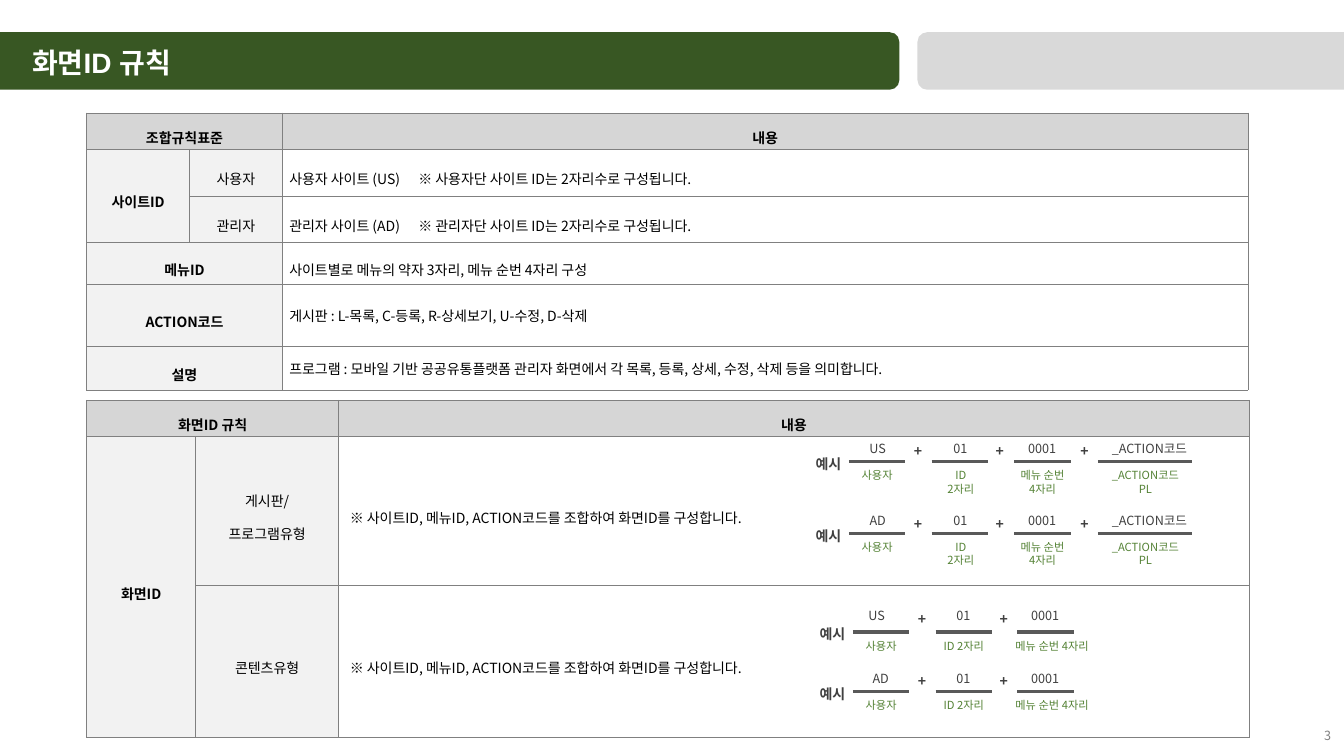
from lxml.etree import SubElement
from pptx import Presentation
from pptx.dml.color import RGBColor
from pptx.enum.shapes import MSO_CONNECTOR as CONN, MSO_SHAPE as SHAPE
from pptx.enum.text import MSO_ANCHOR as ANCHOR, MSO_AUTO_SIZE as AUTO, PP_ALIGN as ALIGN
from pptx.oxml.ns import qn
from pptx.util import Pt

PX = 9144
NOTO = "Noto Sans CJK KR"


def px(n):
    return n * PX


def rgb(value):
    return RGBColor.from_string(value)


class Deck:
    dark, rule, green, grid = "404040", "595959", "548235", "808080"

    def __init__(self, width, height):
        self.prs = Presentation()
        self.prs.slide_width, self.prs.slide_height = px(width), px(height)
        self.s = self.prs.slides.add_slide(self.prs.slide_layouts[6])

    def style(self, tf, size, color, bold=False, align=ALIGN.CENTER, spacing=None, font=NOTO):
        for p in tf.paragraphs:
            p.alignment = align
            if spacing:
                p.line_spacing = spacing
            for r in p.runs:
                r.font.size, r.font.bold, r.font.name = Pt(size), bold, font
                r.font.color.rgb = rgb(color)
                SubElement(r.font._element, qn("a:ea"), typeface=NOTO)

    def text(self, x, y, w, h, text, size, color, anchor=ANCHOR.TOP, grow=True, **kw):
        tf = self.s.shapes.add_textbox(px(x), px(y), px(w), px(h)).text_frame
        tf.word_wrap = True
        tf.auto_size = AUTO.SHAPE_TO_FIT_TEXT if grow else AUTO.NONE
        tf.vertical_anchor = anchor
        tf.text = text
        self.style(tf, size, color, **kw)

    def bar(self, x, y, w, h, color):
        sp = self.s.shapes.add_shape(SHAPE.ROUNDED_RECTANGLE, px(x), px(y), px(w), px(h))
        sp.shadow.inherit = False
        sp.fill.solid()
        sp.fill.fore_color.rgb = rgb(color)
        sp.line.fill.background()

    def line(self, x, y, w):
        c = self.s.shapes.add_connector(CONN.STRAIGHT, px(x), px(y), px(x + w), px(y))
        c.line.color.rgb = rgb(self.rule)
        c.line.width = Pt(2.25)
        SubElement(c._element.spPr, qn("a:effectLst"))

    def border(self, cell):
        tcPr = cell._tc.get_or_add_tcPr()
        for side in "LRTB":
            ln = SubElement(tcPr, qn(f"a:ln{side}"), w=str(Pt(0.5)))
            fill = SubElement(ln, qn("a:solidFill"))
            SubElement(fill, qn("a:srgbClr"), val=self.grid)

    def table(self, x, y, widths, heights, rows, spans, inset=7, tight=(), tab=None):
        frame = self.s.shapes.add_table(
            len(heights), len(widths), px(x), px(y), px(sum(widths)), px(sum(heights)))
        t = frame.table
        t.first_row = t.horz_banding = False
        for col, w in zip(t.columns, widths):
            col.width = px(w)
        for row, h in zip(t.rows, heights):
            row.height = px(h)
        for i, row in enumerate(rows):
            for j, text in enumerate(row):
                cell = t.cell(i, j)
                body = i > 0 and j == 2
                self.border(cell)
                if body:
                    cell.fill.background()
                else:
                    cell.fill.solid()
                    cell.fill.fore_color.rgb = rgb("F2F2F2" if i else "D6D6D6")
                cell.vertical_anchor = ANCHOR.MIDDLE
                cell.margin_left = px(inset if body else 7)
                cell.margin_right = px(7)
                cell.margin_top = cell.margin_bottom = px(2)
                tf = cell.text_frame
                tf.text = text
                self.style(tf, 10, "000000", bold=i == 0 or j == 0,
                           align=ALIGN.LEFT if body else ALIGN.CENTER,
                           spacing=None if body and i in tight else 1.6)
                if "\t" in text:
                    stops = SubElement(tf.paragraphs[0]._p.get_or_add_pPr(), qn("a:tabLst"))
                    SubElement(stops, qn("a:tab"), pos=str(px(tab)), algn="l")
        for first, last in spans:
            t.cell(*first).merge(t.cell(*last))

    def formula(self, x, y, mark_y, site, site_x, parts):
        self.text(x - 43, y - 18, 51, 32, "예시", 10, self.dark, ANCHOR.MIDDLE,
                  bold=True, align=ALIGN.LEFT, spacing=1.5)
        parts = [(0, 56, site, site_x, 51, "사용자", -8, 72)] + parts
        for dx, w, value, value_x, value_w, caption, caption_x, caption_w in parts:
            self.line(x + dx, y, w)
            self.text(x + value_x, mark_y - 1, value_w, 30, value, 9, self.dark,
                      ANCHOR.MIDDLE, spacing=1.5)
            self.text(x + caption_x, y + 2, caption_w, 37 if "\n" in caption else 24,
                      caption, 8, self.green)
        for plus_x in (43, 124, 208)[:len(parts) - 1]:
            self.text(x + plus_x, mark_y, 51, 33, "+", 10, self.dark, ANCHOR.MIDDLE,
                      bold=True, spacing=1.5)


def main():
    d = Deck(1333, 750)
    combine = "※ 사이트ID, 메뉴ID, ACTION코드를 조합하여 화면ID를 구성합니다."
    d.table(86, 397, (108, 142, 903), (30, 148, 151), [
        ("화면ID 규칙", "", "내용"),
        ("화면ID", "게시판/\n프로그램유형", combine),
        ("", "콘텐츠유형", combine),
    ], [((0, 0), (0, 1)), ((1, 0), (2, 0))], inset=11)
    d.table(86, 112, (102, 92, 958), (28, 47, 45, 42, 62, 43), [
        ("조합규칙표준", "", "내용"),
        ("사이트ID", "사용자", "사용자 사이트 (US)\t※ 사용자단 사이트 ID는 2자리수로 구성됩니다."),
        ("", "관리자", "관리자 사이트 (AD)\t※ 관리자단 사이트 ID는 2자리수로 구성됩니다."),
        ("메뉴ID", "", "사이트별로 메뉴의 약자 3자리, 메뉴 순번 4자리 구성"),
        ("ACTION코드", "", "게시판 : L-목록, C-등록, R-상세보기, U-수정, D-삭제"),
        ("설명", "", "프로그램 : 모바일 기반 공공유통플랫폼 관리자 화면에서 "
                   "각 목록, 등록, 상세, 수정, 삭제 등을 의미합니다."),
    ], [((0, 0), (0, 1)), ((1, 0), (2, 0))] + [((i, 0), (i, 1)) for i in (3, 4, 5)],
        tight=(4, 5), tab=128)

    board = [
        (82, 56, "01", 85, 51, "ID\n2자리", 75, 72),
        (164, 56, "0001", 166, 51, "메뉴 순번\n4자리", 148, 88),
        (247, 93, "_ACTION코드", 249, 98, "_ACTION코드\nPL", 250, 88),
    ]
    content = [
        (82, 56, "01", 84, 51, "ID 2자리", 74, 72),
        (163, 56, "0001", 165, 51, "메뉴 순번 4자리", 147, 101),
    ]
    for x, y, mark_y, site, site_x, parts in (
        (842, 458, 427, "US", 3, board),
        (842, 529, 499, "AD", 3, board),
        (846, 627, 593, "US", -2, content),
        (846, 686, 655, "AD", 2, content),
    ):
        d.formula(x, y, mark_y, site, site_x, parts)

    d.bar(-11, 32, 903, 57, "385723")
    d.bar(910, 32, 434, 57, "D9D9D9")
    d.text(22, 40, 400, 44, "화면ID 규칙", 20, "FFFFFF", bold=True, align=ALIGN.LEFT, font="Arial")
    d.text(1030, 710, 300, 40, "3", 9, d.grid, ANCHOR.MIDDLE, grow=False, align=ALIGN.RIGHT)
    d.prs.save("out.pptx")


if __name__ == "__main__":
    main()
